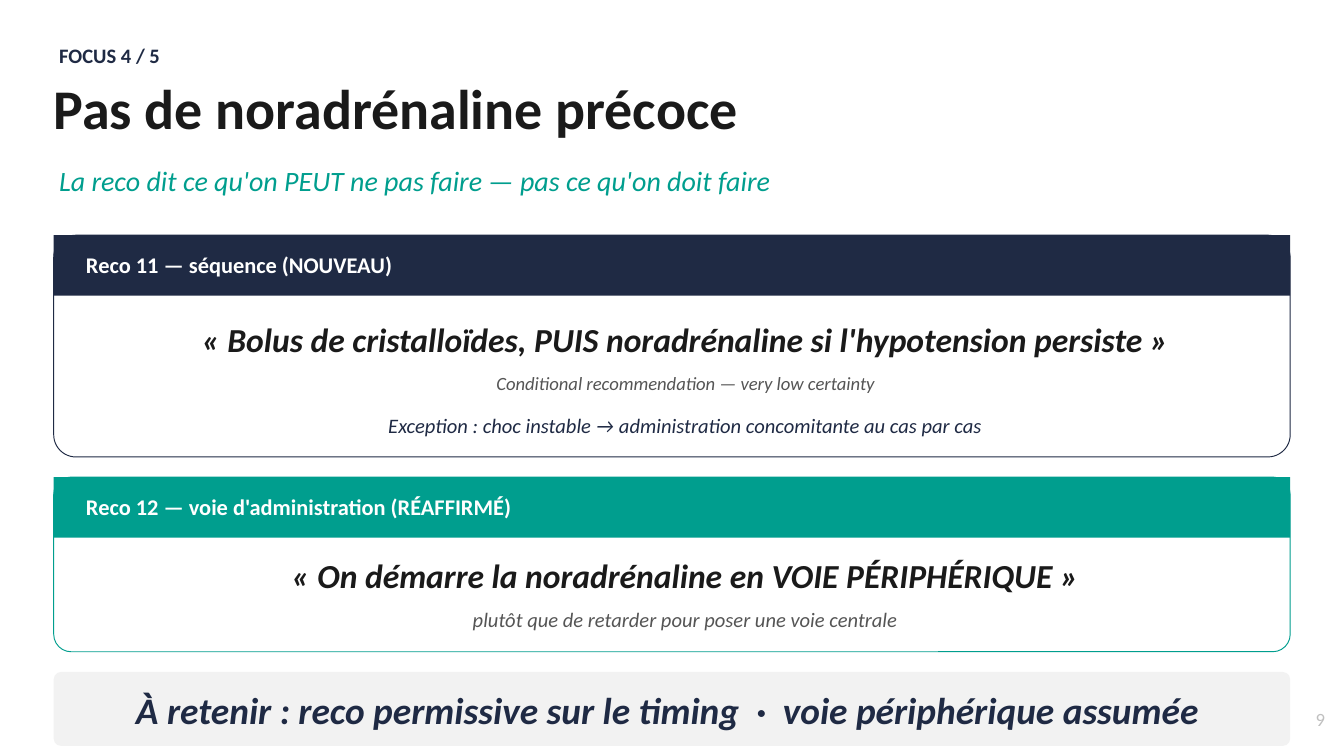
from pptx import Presentation
from pptx.dml.color import RGBColor
from pptx.enum.shapes import MSO_SHAPE
from pptx.enum.text import MSO_ANCHOR, MSO_AUTO_SIZE, PP_ALIGN
from pptx.util import Inches, Pt

NAVY, TEAL, BLACK, GREY = "1F2A44", "009E8E", "1A1A1A", "555555"
WHITE, PALE, SILVER = "FFFFFF", "F2F2F2", "C0C0C0"
LEFT, WIDTH, BAND_HEIGHT = 0.4, 9.2, 0.45
TEXT_LEFT, TEXT_WIDTH = 0.6, 9

STYLES = {
    "tag": {"size": 11, "bold": True, "color": NAVY},
    "title": {"size": 30, "bold": True, "color": BLACK},
    "subtitle": {"size": 15, "italic": True, "color": TEAL},
    "band": {"size": 12, "bold": True, "color": WHITE, "anchor": MSO_ANCHOR.MIDDLE},
    "quote": {"size": 18, "bold": True, "italic": True, "color": BLACK,
              "align": PP_ALIGN.CENTER, "anchor": MSO_ANCHOR.MIDDLE},
    "certainty": {"size": 10, "italic": True, "color": GREY, "align": PP_ALIGN.CENTER},
    "exception": {"size": 11, "italic": True, "color": NAVY, "align": PP_ALIGN.CENTER},
    "detail": {"size": 11, "italic": True, "color": GREY, "align": PP_ALIGN.CENTER},
    "takeaway": {"size": 20, "bold": True, "italic": True, "color": NAVY,
                 "align": PP_ALIGN.CENTER, "anchor": MSO_ANCHOR.MIDDLE},
    "number": {"size": 10, "color": SILVER, "align": PP_ALIGN.RIGHT},
}

HEADINGS = [
    ("FOCUS 4 / 5", "tag", (LEFT, 0.3, 3, 0.23)),
    ("Pas de noradrénaline précoce", "title", (LEFT, 0.55, 5.14, 0.5)),
    ("La reco dit ce qu'on PEUT ne pas faire — pas ce qu'on doit faire",
     "subtitle", (LEFT, 1.2, 9, 0.29)),
]

CARDS = [
    {"top": 1.75, "height": 1.65, "color": NAVY, "lines": [
        ("Reco 11 — séquence (NOUVEAU)", "band", 0.1, 0.24),
        ("« Bolus de cristalloïdes, PUIS noradrénaline si l'hypotension persiste »",
         "quote", 0.6, 0.35),
        ("Conditional recommendation — very low certainty", "certainty", 1, 0.21),
        ("Exception : choc instable → administration concomitante au cas par cas",
         "exception", 1.3, 0.23),
    ]},
    {"top": 3.55, "height": 1.3, "color": TEAL, "lines": [
        ("Reco 12 — voie d'administration (RÉAFFIRMÉ)", "band", 0.1, 0.24),
        ("« On démarre la noradrénaline en VOIE PÉRIPHÉRIQUE »", "quote", 0.55, 0.35),
        ("plutôt que de retarder pour poser une voie centrale", "detail", 0.95, 0.23),
    ]},
]

FOOTERS = [
    ("À retenir : reco permissive sur le timing  ·  voie périphérique assumée ",
     "takeaway", (0.5, 5.09, 9, 0.38)),
    ("9", "number", (9.6, 5.25, 0.3, 0.21)),
]


def rgb(color):
    return RGBColor.from_string(color)


def add_panel(slide, kind, box, fill, outline=None):
    shape = slide.shapes.add_shape(kind, *map(Inches, box))
    shape.shadow.inherit = False
    shape.fill.solid()
    shape.fill.fore_color.rgb = rgb(fill)
    if kind == MSO_SHAPE.ROUNDED_RECTANGLE:
        shape.adjustments[0] = 0.1
    if outline:
        shape.line.color.rgb = rgb(outline)
        shape.line.width = Pt(0.5)
    else:
        shape.line.fill.background()


def add_text(slide, text, style_name, box):
    style = STYLES[style_name]
    is_title = style_name == "title"
    side, end = (0, 0) if is_title else (0.04, 0.02)
    frame = slide.shapes.add_textbox(*map(Inches, box)).text_frame
    frame_format = {
        "word_wrap": not is_title,
        "auto_size": MSO_AUTO_SIZE.SHAPE_TO_FIT_TEXT,
        "vertical_anchor": style.get("anchor", MSO_ANCHOR.TOP),
        "margin_left": Inches(side), "margin_right": Inches(side),
        "margin_top": Inches(end), "margin_bottom": Inches(end),
    }
    for name, value in frame_format.items():
        setattr(frame, name, value)
    paragraph = frame.paragraphs[0]
    paragraph.alignment = style.get("align", PP_ALIGN.LEFT)
    run = paragraph.add_run()
    run.text = text
    font_format = {
        "name": "Calibri", "size": Pt(style["size"]),
        "bold": style.get("bold", False), "italic": style.get("italic", False),
    }
    for name, value in font_format.items():
        setattr(run.font, name, value)
    run.font.color.rgb = rgb(style["color"])


def add_card(slide, card):
    top, color = card["top"], card["color"]
    add_panel(slide, MSO_SHAPE.ROUNDED_RECTANGLE,
              (LEFT, top, WIDTH, card["height"]), WHITE, color)
    add_panel(slide, MSO_SHAPE.RECTANGLE, (LEFT, top, WIDTH, BAND_HEIGHT), color)
    for text, style_name, offset, height in card["lines"]:
        add_text(slide, text, style_name, (TEXT_LEFT, top + offset, TEXT_WIDTH, height))


def main():
    presentation = Presentation()
    presentation.slide_width = Inches(10)
    presentation.slide_height = Inches(10 * 9 / 16)
    slide = presentation.slides.add_slide(presentation.slide_layouts[6])
    slide.background.fill.solid()
    slide.background.fill.fore_color.rgb = rgb(WHITE)
    for heading in HEADINGS:
        add_text(slide, *heading)
    for card in CARDS:
        add_card(slide, card)
    add_panel(slide, MSO_SHAPE.ROUNDED_RECTANGLE, (LEFT, 5, WIDTH, 0.55), PALE)
    for footer in FOOTERS:
        add_text(slide, *footer)
    presentation.save("out.pptx")


if __name__ == "__main__":
    main()
